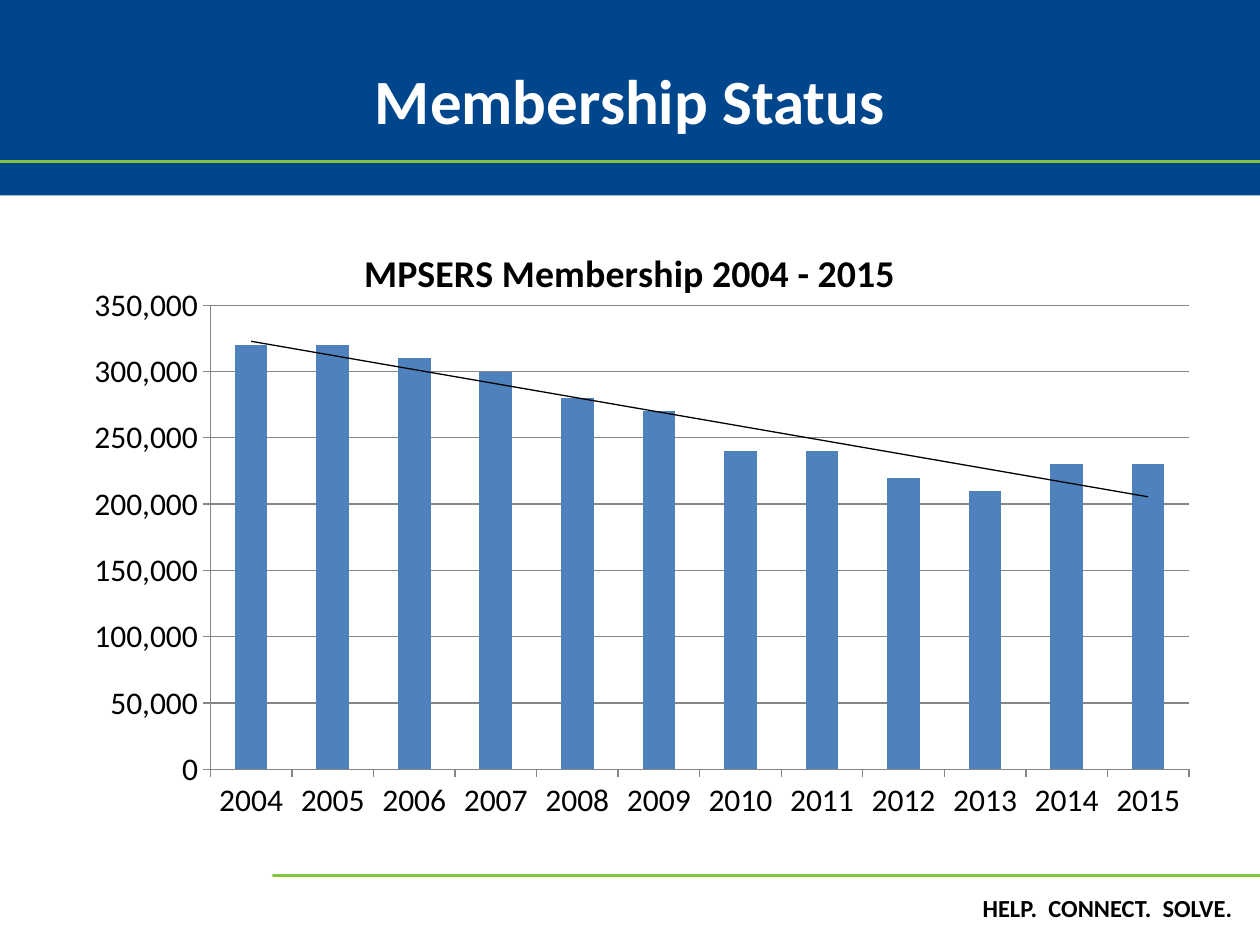
from dataclasses import dataclass

from lxml import etree
from pptx import Presentation
from pptx import util as u
from pptx.chart.data import CategoryChartData
from pptx.dml.color import RGBColor
from pptx.enum import chart as ch, shapes, text
from pptx.oxml import parse_xml
from pptx.oxml.ns import nsdecls, qn

PX = 9144  # EMU per px, 100 px to the inch
FONT = "Calibri"
BLUE, GREEN, BAR, GREY = "00468C", "84C341", "4F81BD", "868686"
BLACK, WHITE = "000000", "FFFFFF"
HEAD = "MPSERS Membership 2004 - 2015"
COUNTS = (320000, 320000, 310000, 300000, 280000, 270000,
          240000, 240000, 220000, 210000, 230000, 230000)
PLOT = {"x": 0.13, "y": 0.136, "w": 0.863, "h": 0.744}


@dataclass
class Rule:
    left: int
    y: int
    right: int


@dataclass
class Label:
    words: str
    box: tuple[int, int, int, int]
    size: int
    hue: str
    align: text.PP_ALIGN
    anchor: text.MSO_ANCHOR


RULES = (Rule(0, 128, 1000), Rule(217, 695, 1000))
LABELS = (
    Label("HELP.  CONNECT.  SOLVE.", (770, 704, 233, 34), 14, BLACK,
          text.PP_ALIGN.LEFT, text.MSO_ANCHOR.TOP),
    Label("Membership Status", (50, 16, 900, 125), 36, WHITE,
          text.PP_ALIGN.CENTER, text.MSO_ANCHOR.MIDDLE),
)


def px(*sizes: int) -> list[int]:
    return [u.Emu(size * PX) for size in sizes]


def color(code: str) -> RGBColor:
    return RGBColor.from_string(code)


def style(font, size: float, hue: str, bold: bool) -> None:
    for name, value in {"name": FONT, "size": u.Pt(size), "bold": bold}.items():
        setattr(font, name, value)
    font.color.rgb = color(hue)


def stroke(line, hue: str, width: float) -> None:
    line.color.rgb = color(hue)
    line.width = u.Pt(width)


def add_band(slide) -> None:
    band = slide.shapes.add_shape(shapes.MSO_SHAPE.RECTANGLE, *px(0, 0, 1000, 155))
    band.shadow.inherit = False
    band.fill.solid()
    band.fill.fore_color.rgb = color(BLUE)
    band.line.fill.background()


def add_rule(slide, rule: Rule) -> None:
    """Draw a green line with round ends."""
    line = slide.shapes.add_connector(
        shapes.MSO_CONNECTOR.STRAIGHT, *px(rule.left, rule.y, rule.right, rule.y))
    stroke(line.line, GREEN, 2)
    props = line._element.spPr
    props.find(qn("a:ln")).set("cap", "rnd")
    etree.SubElement(props, qn("a:effectLst"))


def add_label(slide, label: Label) -> None:
    frame = slide.shapes.add_textbox(*px(*label.box)).text_frame
    frame.word_wrap = True
    frame.vertical_anchor = label.anchor
    para = frame.paragraphs[0]
    para.text = label.words
    para.alignment = label.align
    style(para.font, label.size, label.hue, True)


def set_plot(chart) -> None:
    """Fix the inner plot area as fractions of the chart."""
    area = chart._chartSpace.chart.plotArea
    for old in area.findall(qn("c:layout")):
        area.remove(old)
    modes = "".join(f'<c:{key}Mode val="edge"/>' for key in "xy")
    sizes = "".join(f'<c:{key} val="{value}"/>' for key, value in PLOT.items())
    area.insert(0, parse_xml(
        f'<c:layout {nsdecls("c")}><c:manualLayout><c:layoutTarget val="inner"/>'
        f'{modes}{sizes}</c:manualLayout></c:layout>'))


def add_trend(series) -> None:
    trend = parse_xml(
        f'<c:trendline {nsdecls("c", "a")}><c:spPr><a:ln w="9525"><a:solidFill>'
        f'<a:srgbClr val="{BLACK}"/></a:solidFill></a:ln></c:spPr>'
        '<c:trendlineType val="linear"/><c:dispRSqr val="0"/>'
        '<c:dispEq val="0"/></c:trendline>')
    series._element.find(qn("c:cat")).addprevious(trend)


def add_chart(slide) -> None:
    data = CategoryChartData(number_format="#,##0")
    data.categories = [str(2004 + step) for step in range(len(COUNTS))]
    data.add_series(HEAD, COUNTS)
    chart = slide.shapes.add_chart(
        ch.XL_CHART_TYPE.COLUMN_CLUSTERED, *px(50, 175, 900, 495), data).chart
    style(chart.font, 18, BLACK, False)
    chart.has_legend = False
    chart.has_title = True
    title = chart.chart_title
    title.include_in_layout = False
    title.text_frame.text = HEAD
    style(title.text_frame.paragraphs[0].runs[0].font, 21.6, BLACK, True)

    plot = chart.plots[0]
    plot.gap_width = 150
    plot.vary_by_categories = False
    series = plot.series[0]
    series.format.fill.solid()
    series.format.fill.fore_color.rgb = color(BAR)
    add_trend(series)

    for axis in (chart.category_axis, chart.value_axis):
        axis.major_tick_mark = ch.XL_TICK_MARK.OUTSIDE
        axis.minor_tick_mark = ch.XL_TICK_MARK.NONE
        stroke(axis.format.line, GREY, 0.75)
    scale = chart.value_axis
    for name, value in {"minimum_scale": 0, "maximum_scale": 350000,
                        "major_unit": 50000, "has_major_gridlines": True}.items():
        setattr(scale, name, value)
    scale.tick_labels.number_format = "#,##0"
    scale.tick_labels.number_format_is_linked = False
    stroke(scale.major_gridlines.format.line, GREY, 0.75)
    set_plot(chart)


def main() -> None:
    deck = Presentation()
    deck.slide_width, deck.slide_height = px(1000, 750)
    slide = deck.slides.add_slide(deck.slide_layouts[6])
    add_band(slide)
    for rule in RULES:
        add_rule(slide, rule)
    for label in LABELS:
        add_label(slide, label)
    add_chart(slide)
    deck.save("out.pptx")


if __name__ == "__main__":
    main()
